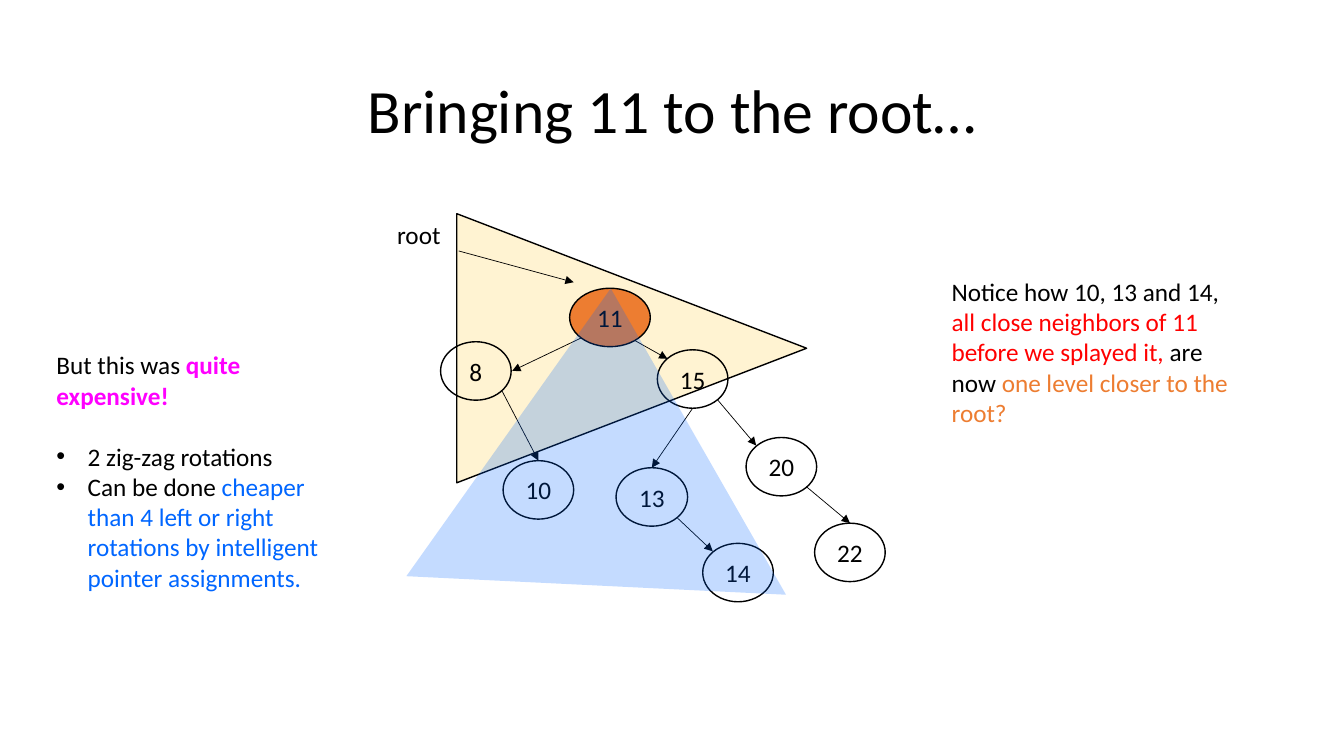
import dataclasses

import pptx
import pptx.dml.color
import pptx.enum.dml
import pptx.enum.shapes
import pptx.enum.text
import pptx.oxml
import pptx.oxml.ns
import pptx.util
from pptx.util import Inches

BLACK, ORANGE, BLUE = "000000", "ED7D31", "0066FF"
RED, MAGENTA, YELLOW = "FF0000", "FF00FF", "FFD966"
NODE_HEIGHT = 0.58
SHAPES = pptx.enum.shapes.MSO_SHAPE
ALIGN = pptx.enum.text.PP_ALIGN
ANCHOR = pptx.enum.text.MSO_ANCHOR


@dataclasses.dataclass
class Node:
    key: int
    left: float
    top: float
    width: float = 0.7
    fill: str = ""


@dataclasses.dataclass
class Arrow:
    start: tuple[float, float]
    end: tuple[float, float]
    top_of: int = 0  # key of the node whose top the arrow meets


@dataclasses.dataclass
class Triangle:
    box: tuple[float, float, float, float]
    rotation: float
    fill: str
    opacity: int
    outlined: bool


@dataclasses.dataclass
class Span:
    text: str
    color: str = BLACK
    bold: bool = False


NODES = [
    Node(8, 4.37, 3.39), Node(15, 6.52, 3.47), Node(20, 7.4, 4.34),
    Node(22, 8.08, 5.19), Node(13, 6.11, 4.64, 0.71), Node(10, 4.99, 4.57),
    Node(14, 6.97, 5.39),
]
ROOT = Node(11, 5.65, 2.86, 0.8, ORANGE)
ARROWS = [
    Arrow((5.73, 3.06), (6.62, 3.56)),
    Arrow((5.77, 3.35), (5.08, 3.68)),
    Arrow((7.12, 3.97), (7.5, 4.42)),
    Arrow((8, 4.83), (8.43, 5.19), 22),
    Arrow((6.72, 5.14), (7.07, 5.47)),
    Arrow((4.98, 3.88), (5.34, 4.57), 10),
    Arrow((6.87, 4.05), (6.47, 4.64), 13),
    Arrow((4.55, 2.49), (5.69, 2.8)),
]
ROOT_SUBTREE = Triangle((4.93, 1.72, 2.67, 3.47), 90, YELLOW, 29, True)
NEIGHBORS = Triangle((4.1, 2.86, 3.77, 2.95), 2.8, BLUE, 23, False)
NOTICE = [
    Span("Notice how 10, 13 and 14, "),
    Span("all close neighbors of 11 before we splayed it,", RED),
    Span(" are now "),
    Span("one level closer to the root?", ORANGE),
]
COST = [Span("But this was "), Span("quite expensive!", MAGENTA, True)]
COST_BULLETS = [
    [Span("2 zig-zag rotations")],
    [Span("Can be done "),
     Span("cheaper than 4 left or right rotations by intelligent pointer assignments.", BLUE)],
]


def paint(color_format, color: str) -> None:
    color_format.rgb = pptx.dml.color.RGBColor.from_string(color)


def place(shape, left: float, top: float, width: float, height: float) -> None:
    shape.left, shape.top = Inches(left), Inches(top)
    shape.width, shape.height = Inches(width), Inches(height)


def add_child(parent, tag: str, **attributes: str):
    child = pptx.oxml.ns.qn(tag)
    element = parent.makeelement(child, attributes)
    parent.append(element)
    return element


def style_shape(shape, fill: str, outlined: bool = True) -> None:
    shape.shadow.inherit = False
    if fill:
        shape.fill.solid()
        paint(shape.fill.fore_color, fill)
    else:
        shape.fill.background()
    if outlined:
        paint(shape.line.color, BLACK)
        shape.line.width = pptx.util.Pt(1)
    else:
        shape.line.fill.background()


def write(para, spans: list[Span], size: float = 18) -> None:
    para.font.size = pptx.util.Pt(size)
    para.font.name = "Calibri"
    for span in spans:
        run = para.add_run()
        run.text = span.text
        run.font.bold = span.bold
        paint(run.font.color, span.color)


def add_triangle(page, triangle: Triangle) -> None:
    shape = page.shapes.add_shape(
        SHAPES.ISOSCELES_TRIANGLE, *map(Inches, triangle.box))
    shape.rotation = triangle.rotation
    style_shape(shape, triangle.fill, triangle.outlined)
    color = shape.fill._xPr.find(".//" + pptx.oxml.ns.qn("a:srgbClr"))
    add_child(color, "a:alpha", val=str(triangle.opacity * 1000))


def add_node(page, node: Node):
    shape = page.shapes.add_shape(
        SHAPES.OVAL, Inches(node.left), Inches(node.top),
        Inches(node.width), Inches(NODE_HEIGHT))
    style_shape(shape, node.fill)
    frame = shape.text_frame
    frame.word_wrap = False
    frame.vertical_anchor = ANCHOR.MIDDLE
    para = frame.paragraphs[0]
    para.alignment = ALIGN.CENTER
    write(para, [Span(str(node.key))])
    return shape


def add_arrow(page, arrow: Arrow, ovals: dict) -> None:
    line = page.shapes.add_connector(
        pptx.enum.shapes.MSO_CONNECTOR.STRAIGHT,
        *map(Inches, arrow.start + arrow.end))
    if arrow.top_of:
        line.end_connect(ovals[arrow.top_of], 0)
    paint(line.line.color, BLACK)
    line.line.width = pptx.util.Pt(0.5)
    add_child(line.line._get_or_add_ln(), "a:tailEnd", type="triangle")
    add_child(line._element.spPr, "a:effectLst")


def add_text(page, left: float, top: float, width: float, height: float,
             spans: list[Span]) -> None:
    box = page.shapes.add_textbox(*map(Inches, (left, top, width, height)))
    box.text_frame.word_wrap = True
    write(box.text_frame.paragraphs[0], spans)


def fill_title(page) -> None:
    title = page.shapes.title
    place(title, 0.92, 0.4, 11.5, 1.45)
    title.text_frame.vertical_anchor = ANCHOR.MIDDLE
    para = title.text_frame.paragraphs[0]
    para.alignment = ALIGN.CENTER
    para.line_spacing = 0.9
    write(para, [Span("Bringing 11 to the root…")], 44)


def fill_cost_list(page) -> None:
    body = page.placeholders[1]
    place(body, 0.46, 3.42, 3.08, 2.52)
    frame = body.text_frame
    frame.auto_size = pptx.enum.text.MSO_AUTO_SIZE.NONE
    frame.vertical_anchor = ANCHOR.TOP
    for index, spans in enumerate([COST, *COST_BULLETS]):
        para = frame.add_paragraph() if index else frame.paragraphs[0]
        # The first bullet stands one line below the statement
        para.space_before = pptx.util.Pt(22 if index == 1 else 0)
        indent = Inches(0.31) if index else 0
        properties = para._p.get_or_add_pPr()
        properties.set("marL", str(indent))
        properties.set("indent", str(-indent))
        if index:
            add_child(properties, "a:buFont", typeface="Arial")
            add_child(properties, "a:buChar", char="•")
        else:
            add_child(properties, "a:buNone")
        write(para, spans)


def main() -> None:
    deck = pptx.Presentation()
    deck.slide_width, deck.slide_height = Inches(13.33), Inches(7.5)
    page = deck.slides.add_slide(deck.slide_layouts[1])

    # Title and side texts
    fill_title(page)
    fill_cost_list(page)
    add_text(page, 9.34, 2.69, 3.08, 1.62, NOTICE)

    # Tree, with the new root above its arrows
    add_triangle(page, ROOT_SUBTREE)
    ovals = {node.key: add_node(page, node) for node in NODES}
    for arrow in ARROWS:
        add_arrow(page, arrow, ovals)
    add_node(page, ROOT)
    add_text(page, 3.84, 2.13, 1.08, 0.4, [Span("root")])
    add_triangle(page, NEIGHBORS)

    deck.save("out.pptx")


if __name__ == "__main__":
    main()
